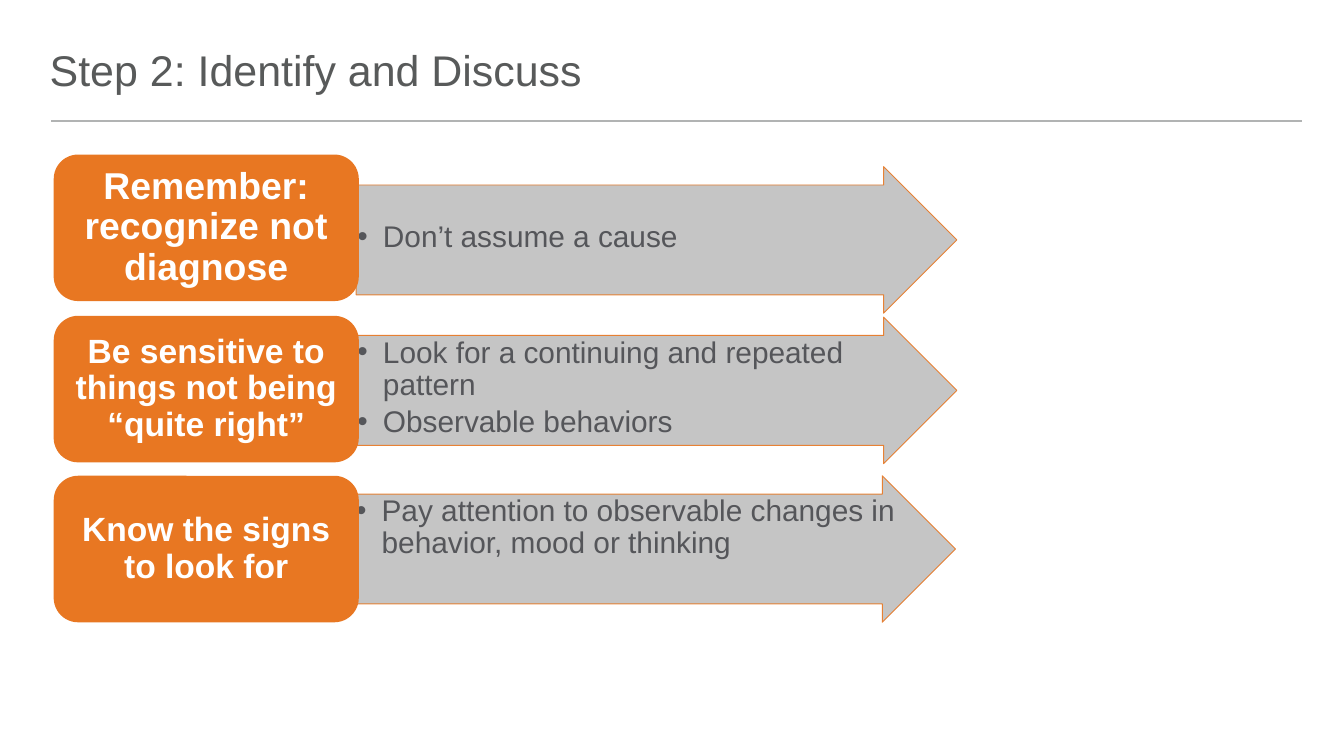
"""Build the "Step 2: Identify and Discuss" slide."""
from lxml import etree
from pptx import Presentation
from pptx.dml.color import RGBColor
from pptx.enum import shapes, text
from pptx.oxml import ns
from pptx.util import Inches, Pt

TITLE = "Step 2: Identify and Discuss"
STEPS = [
    {"label": "Remember: recognize not diagnose", "size": 20, "top": 1.15,
     "arrow": (2.65, 1.24), "inset": 0.31,
     "points": ["Don’t assume a cause"]},
    {"label": "Be sensitive to things not being “quite right”", "size": 18, "top": 2.35,
     "arrow": (2.65, 2.36), "inset": 0.01,
     "points": ["Look for a continuing and repeated pattern", "Observable behaviors"]},
    {"label": "Know the signs to look for", "size": 18, "top": 3.54,
     "arrow": (2.64, 3.54), "inset": 0.01,
     "points": ["Pay attention to observable changes in behavior, mood or thinking"]},
]
THEME = {
    "font": "Arial", "title": "585A5A", "rule": "B1B3B3", "accent": "E87722",
    "arrow": "BFBFBF", "body": "55565A", "label": "FFFFFF",
    "title_size": 23, "body_size": 16, "opacity": 90,
}
LABEL_LEFT, LABEL_WIDTH, ARROW_WIDTH, ROW_HEIGHT = 0.4, 2.27, 4.47, 1.09
POINTS_DROP, POINTS_WIDTH, POINTS_HEIGHT = 0.14, 4.07, 0.82


def paint(color_format, key):
    color_format.rgb = RGBColor.from_string(THEME[key])


def fade(sp):
    for clr in sp._element.spPr.iter(ns.qn("a:srgbClr")):
        etree.SubElement(clr, ns.qn("a:alpha"), val=str(THEME["opacity"] * 1000))


def set_frame(tf, anchor, left=0, top=0, right=0, bottom=0):
    tf.word_wrap = True
    tf.vertical_anchor = anchor
    tf.margin_left, tf.margin_top = Inches(left), Inches(top)
    tf.margin_right, tf.margin_bottom = Inches(right), Inches(bottom)


def style(p, size, color, align=text.PP_ALIGN.LEFT, bold=False):
    p.alignment = align
    p.line_spacing = 0.9
    for r in p.runs:
        r.font.name, r.font.size, r.font.bold = THEME["font"], Pt(size), bold
        paint(r.font.color, color)


def add_bullet(p):
    pPr = p._p.get_or_add_pPr()
    pPr.set("marL", str(Inches(0.19)))
    pPr.set("indent", str(-Inches(0.19)))
    etree.SubElement(pPr, ns.qn("a:buFont"), typeface=THEME["font"])
    etree.SubElement(pPr, ns.qn("a:buChar"), char="•")


def add_block(s, kind, left, top, width, fill):
    sp = s.shapes.add_shape(kind, Inches(left), Inches(top), Inches(width), Inches(ROW_HEIGHT))
    sp.shadow.inherit = False
    sp.fill.solid()
    paint(sp.fill.fore_color, fill)
    return sp


def add_title(s):
    sp = s.shapes.add_textbox(Inches(0.37), Inches(0.35), Inches(6.75), Inches(0.36))
    tf = sp.text_frame
    tf.text = TITLE
    set_frame(tf, text.MSO_ANCHOR.BOTTOM)
    style(tf.paragraphs[0], THEME["title_size"], "title")
    rule = s.shapes.add_connector(
        shapes.MSO_CONNECTOR.STRAIGHT, Inches(0.38), Inches(0.9), Inches(9.69), Inches(0.9))
    paint(rule.line.color, "rule")
    rule.line.width = Pt(1)
    etree.SubElement(rule._element.spPr, ns.qn("a:effectLst"))


def add_arrow(s, step):
    left, top = step["arrow"]
    sp = add_block(s, shapes.MSO_SHAPE.RIGHT_ARROW, left, top, ARROW_WIDTH, "arrow")
    sp.adjustments[0], sp.adjustments[1] = 0.75, 0.5
    paint(sp.line.color, "accent")
    sp.line.width = Pt(0.5)
    fade(sp)


def add_points(s, step):
    left, top = step["arrow"]
    sp = s.shapes.add_textbox(Inches(left), Inches(top + POINTS_DROP),
                              Inches(POINTS_WIDTH), Inches(POINTS_HEIGHT))
    tf = sp.text_frame
    tf.text = "\n".join(step["points"])
    set_frame(tf, text.MSO_ANCHOR.TOP, 0.01, step["inset"], 0.01, 0.01)
    for p in tf.paragraphs:
        add_bullet(p)
        style(p, THEME["body_size"], "body")
        p.space_after = Pt(2.7)


def add_label(s, step):
    sp = add_block(s, shapes.MSO_SHAPE.ROUNDED_RECTANGLE, LABEL_LEFT, step["top"],
                   LABEL_WIDTH, "accent")
    sp.line.fill.background()
    tf = sp.text_frame
    tf.text = step["label"]
    set_frame(tf, text.MSO_ANCHOR.MIDDLE, 0.07, 0.04, 0.07, 0.04)
    style(tf.paragraphs[0], step["size"], "label", text.PP_ALIGN.CENTER, True)


def main():
    prs = Presentation()
    prs.slide_width = Inches(10)
    prs.slide_height = prs.slide_width * 9 // 16
    s = prs.slides.add_slide(prs.slide_layouts[6])
    add_title(s)
    for step in STEPS:
        add_arrow(s, step)
        add_points(s, step)
        add_label(s, step)
    prs.save("out.pptx")


if __name__ == "__main__":
    main()
